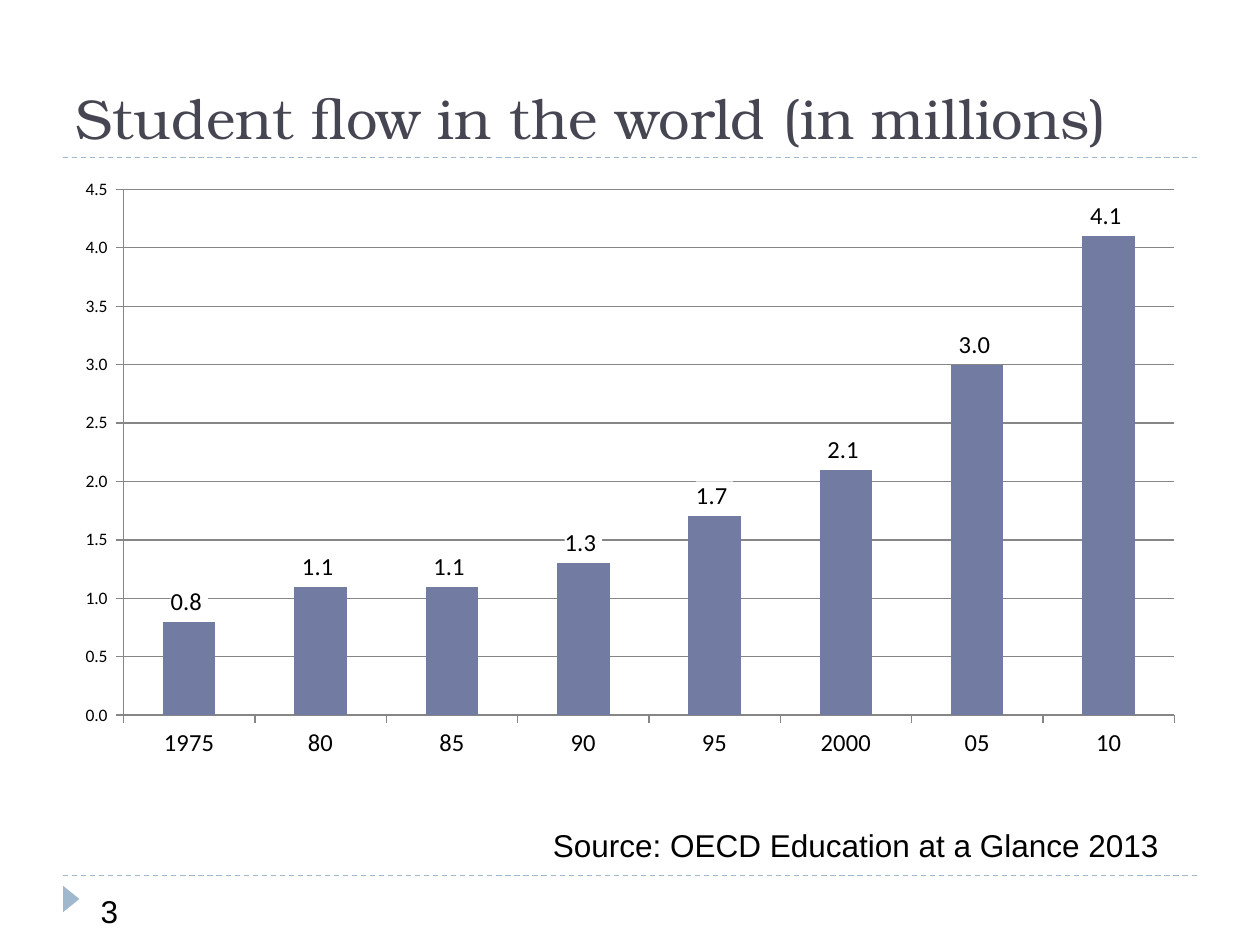
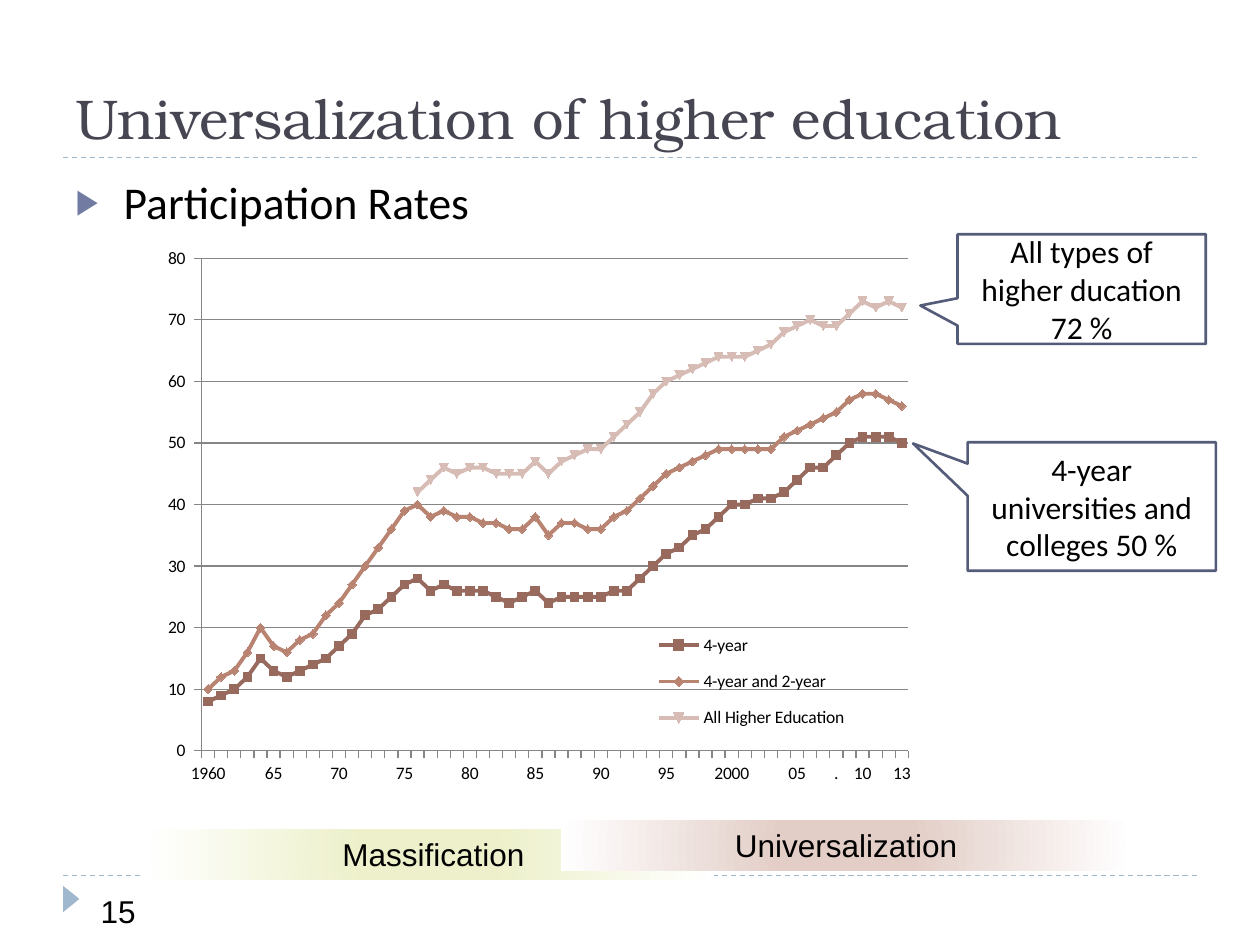
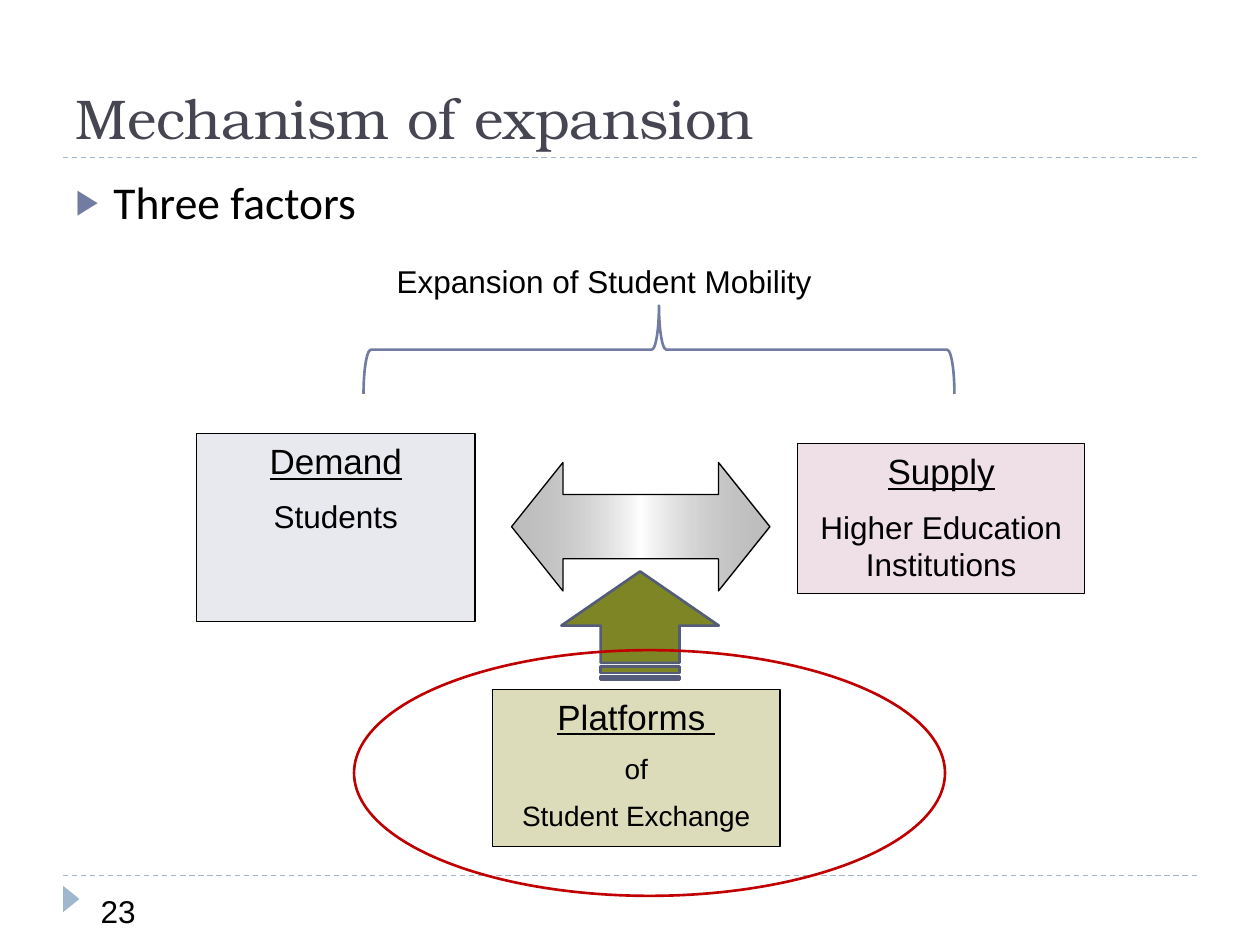
from dataclasses import dataclass

from lxml import etree
from pptx import Presentation
from pptx import util as u
from pptx.chart import data as cd
from pptx.dml import color as dc
from pptx.enum import chart as ch, dml, shapes, text
from pptx.oxml import ns

HUES = {
    "ink": "000000", "white": "FFFFFF", "title": "464653", "rule": "9FB8CD",
    "main": "727CA3", "edge": "545C79", "grid": "868686",
    "lime": "EDF0CA", "rose": "E3CEC7", "gray": "808080",
    "blue": "666699", "plum": "993366", "olive": "808000",
    "moss": "7D8525", "red": "C00000",
    "brown": "986A5D", "clay": "B98371", "blush": "D6BCB4",
}
SERIF, SANS, PLAIN = "TeX Gyre Bonum", "Calibri", "Arial"
KIND = shapes.MSO_SHAPE
LEFT, MID = text.PP_ALIGN.LEFT, text.PP_ALIGN.CENTER
TOP, HALF, BASE = text.MSO_ANCHOR.TOP, text.MSO_ANCHOR.MIDDLE, text.MSO_ANCHOR.BOTTOM
Area = tuple[float, float, float, float]


@dataclass
class Line:
    words: str
    size: float = 18
    under: bool = False
    gap: float = 0


@dataclass
class Form:
    kind: shapes.MSO_SHAPE
    area: Area
    fill: str | None = None
    edge: str | None = None
    width: float = 0.75
    turn: float = 0
    adjust: tuple[float, ...] = ()
    alpha: int = 100


@dataclass
class Stop:
    place: int
    hue: str
    alpha: int = 100


@dataclass
class Series:
    name: str
    hue: str
    start: int
    vals: list[int]


def rgb(name: str) -> dc.RGBColor:
    return dc.RGBColor.from_string(HUES[name])


def inch(area: Area) -> list[u.Length]:
    return [u.Inches(side) for side in area]


def child(parent, tag: str, **attrs):
    return etree.SubElement(parent, ns.qn(tag), {k: str(v) for k, v in attrs.items()})


def move(shape, area: Area) -> None:
    shape.left, shape.top, shape.width, shape.height = inch(area)


def write(frame, lines: list[Line], font: str = PLAIN, hue: str = "ink",
          align=LEFT, anchor=TOP) -> None:
    frame.word_wrap = True
    frame.auto_size = text.MSO_AUTO_SIZE.NONE
    frame.vertical_anchor = anchor
    frame.text = "\n".join(line.words for line in lines)
    for para, line in zip(frame.paragraphs, lines):
        para.alignment = align
        para.space_before = u.Pt(line.gap)
        for run in para.runs:
            run.font.name = font
            run.font.size = u.Pt(line.size)
            run.font.underline = line.under
            run.font.color.rgb = rgb(hue)


def draw(slide, form: Form):
    shape = slide.shapes.add_shape(form.kind, *inch(form.area))
    shape.shadow.inherit = False
    shape.rotation = form.turn
    for i, value in enumerate(form.adjust):
        shape.adjustments[i] = value
    if form.fill:
        shape.fill.solid()
        shape.fill.fore_color.rgb = rgb(form.fill)
        if form.alpha < 100:
            tint = shape._element.spPr.find(".//" + ns.qn("a:srgbClr"))
            child(tint, "a:alpha", val=form.alpha * 1000)
    else:
        shape.fill.background()
    if form.edge:
        shape.line.color.rgb = rgb(form.edge)
        shape.line.width = u.Pt(form.width)
    else:
        shape.line.fill.background()
    return shape


def blend(shape, stops: list[Stop], radial: bool = False) -> None:
    props = shape._element.spPr
    props.remove(props.find(ns.qn("a:noFill")))
    grad = etree.Element(ns.qn("a:gradFill"), rotWithShape="1")
    group = child(grad, "a:gsLst")
    for stop in stops:
        node = child(group, "a:gs", pos=stop.place * 1000)
        tint = child(node, "a:srgbClr", val=HUES[stop.hue])
        if stop.alpha < 100:
            child(tint, "a:alpha", val=stop.alpha * 1000)
    if radial:
        way = child(grad, "a:path", path="circle")
        child(way, "a:fillToRect", l=50000, t=50000, r=50000, b=50000)
    else:
        child(grad, "a:lin", ang=0, scaled=1)
    props.find(ns.qn("a:prstGeom")).addnext(grad)


def label(slide, area: Area, words: str) -> None:
    write(slide.shapes.add_textbox(*inch(area)).text_frame, [Line(words)])


def rule(slide, y: float) -> None:
    line = slide.shapes.add_connector(shapes.MSO_CONNECTOR.STRAIGHT,
                                      *inch((0.5, y, 9.5, y)))
    line.line.color.rgb = rgb("rule")
    line.line.width = u.Pt(0.75)
    line.line.dash_style = dml.MSO_LINE.DASH
    child(line._element.spPr, "a:effectLst")


def start(deck, title: str, page: str, point: str = "", depth: float = 0):
    slide = deck.slides.add_slide(deck.slide_layouts[1 if point else 5])
    head = slide.shapes.title
    move(head, (0.5, 0.17, 9, 1.08))
    write(head.text_frame, [Line(title, 32)], SERIF, "title", anchor=BASE)
    if point:
        body = slide.placeholders[1]
        move(body, (0.5, 1.33, 9, depth))
        write(body.text_frame, [Line(point, 26, gap=6)], SANS)
        props = body.text_frame.paragraphs[0]._p.get_or_add_pPr()
        props.set("marL", str(u.Inches(0.3)))
        props.set("indent", str(u.Inches(-0.3)))
        child(child(props, "a:buClr"), "a:srgbClr", val=HUES["main"])
        child(props, "a:buSzPct", val=76000)
        child(props, "a:buFont", typeface=PLAIN)
        child(props, "a:buChar", char="▶")
    for y in (1.25, 6.95):
        rule(slide, y)
    draw(slide, Form(KIND.ISOSCELES_TRIANGLE, (0.46, 7.07, 0.21, 0.13), "rule", turn=90))
    label(slide, (0.7, 7.03, 1.33, 0.4), page)
    return slide


def plot(slide, kind, area: Area, data, peak: float, step: float, style: str):
    chart = slide.shapes.add_chart(kind, *inch(area), data).chart
    chart.has_title = False
    chart.has_legend = False
    chart.font.name = SANS
    chart.font.size = u.Pt(10)
    chart.font.color.rgb = rgb("ink")
    scale = chart.value_axis
    scale.minimum_scale, scale.maximum_scale, scale.major_unit = 0, peak, step
    scale.has_major_gridlines = True
    scale.tick_labels.number_format = style
    scale.tick_labels.number_format_is_linked = False
    for part in (scale, chart.category_axis, scale.major_gridlines):
        part.format.line.color.rgb = rgb("grid")
        part.format.line.width = u.Pt(0.75)
    for axis in (scale, chart.category_axis):
        axis.major_tick_mark = ch.XL_TICK_MARK.OUTSIDE
    return chart


def layout(parent, area: Area, whole: Area, inner: bool = False):
    outer = etree.Element(ns.qn("c:layout"))
    box = child(outer, "c:manualLayout")
    if inner:
        child(box, "c:layoutTarget", val="inner")
    for side in "xy":
        child(box, f"c:{side}Mode", val="edge")
    for side, value, full in zip("xywh", area, whole[2:] * 2):
        child(box, f"c:{side}", val=value / full)
    for old in parent.findall(ns.qn("c:layout")):
        parent.remove(old)
    return outer


def flow(deck) -> None:
    slide = start(deck, "Student flow in the world (in millions)", "3")
    style = r"0.0_);[Red]\(0.0\)"
    data = cd.CategoryChartData(number_format=style)
    data.categories = ["1975", "80", "85", "90", "95", "2000", "05", "10"]
    data.add_series("Series 1", [0.8, 1.1, 1.1, 1.3, 1.7, 2.1, 3, 4.1])
    chart = plot(slide, ch.XL_CHART_TYPE.COLUMN_CLUSTERED, (0.5, 1.33, 9, 4.78),
                 data, 4.5, 0.5, style)
    chart.category_axis.tick_labels.font.size = u.Pt(14)
    bars = chart.plots[0]
    bars.gap_width = 150
    bars.vary_by_categories = False
    fill = bars.series[0].format.fill
    fill.solid()
    fill.fore_color.rgb = rgb("main")
    bars.has_data_labels = True
    marks = bars.data_labels
    marks.show_value = True
    marks.number_format = style
    marks.number_format_is_linked = False
    marks.position = ch.XL_LABEL_POSITION.OUTSIDE_END
    marks.font.size = u.Pt(14)
    back = etree.Element(ns.qn("c:spPr"))
    child(child(back, "a:solidFill"), "a:srgbClr", val=HUES["white"])
    marks._element.find(ns.qn("c:numFmt")).addnext(back)
    label(slide, (4.29, 6.51, 5.04, 0.4), "Source: OECD Education at a Glance 2013")


RATES = [
    Series("4-year", "brown", 0, [
        8, 9, 10, 12, 15, 13, 12, 13, 14, 15, 17, 19, 22, 23, 25, 27, 28, 26,
        27, 26, 26, 26, 25, 24, 25, 26, 24, 25, 25, 25, 25, 26, 26, 28, 30, 32,
        33, 35, 36, 38, 40, 40, 41, 41, 42, 44, 46, 46, 48, 50, 51, 51, 51, 50]),
    Series("4-year and 2-year", "clay", 0, [
        10, 12, 13, 16, 20, 17, 16, 18, 19, 22, 24, 27, 30, 33, 36, 39, 40, 38,
        39, 38, 38, 37, 37, 36, 36, 38, 35, 37, 37, 36, 36, 38, 39, 41, 43, 45,
        46, 47, 48, 49, 49, 49, 49, 49, 51, 52, 53, 54, 55, 57, 58, 58, 57, 56]),
    Series("All Higher Education", "blush", 16, [
        42, 44, 46, 45, 46, 46, 45, 45, 45, 47, 45, 47, 48, 49, 49, 51, 53, 55,
        58, 60, 61, 62, 63, 64, 64, 64, 65, 66, 68, 69, 70, 69, 69, 71, 73, 72,
        73, 72]),
]


def years() -> list[str]:
    names = [""] * 54
    for year in range(1960, 2011, 5):
        names[year - 1960] = str(year) if year in (1960, 2000) else f"{year % 100:02}"
    names[48], names[53] = ".", "13"
    return names


def spread(deck) -> None:
    slide = start(deck, "Universalization of higher education", "15",
                  " Participation Rates", 5.37)
    for area, hue, words in (
        ((1.14, 6.58, 4.53, 0.4), "lime", " Massification"),
        ((4.45, 6.51, 4.53, 0.4), "rose", "Universalization"),
    ):
        band = draw(slide, Form(KIND.RECTANGLE, area))
        blend(band, [Stop(23, hue), Stop(100, "white")], radial=True)
        write(band.text_frame, [Line(words)], align=MID)

    data = cd.CategoryChartData(number_format="0_ ")
    data.categories = years()
    for rate in RATES:
        data.add_series(rate.name, [None] * rate.start + rate.vals)
    whole = (1.14, 1.86, 6.77, 4.72)
    chart = plot(slide, ch.XL_CHART_TYPE.LINE_MARKERS, whole, data, 80, 10, "0_ ")
    for rate, line in zip(RATES, chart.plots[0].series):
        line.smooth = False
        line.format.line.color.rgb = rgb(rate.hue)
        line.format.line.width = u.Pt(2.25)
        line.marker.size = 5
        fill = line.marker.format.fill
        fill.solid()
        fill.fore_color.rgb = rgb(rate.hue)
        line.marker.format.line.color.rgb = rgb(rate.hue)
    node = chart.category_axis._element
    for props in node.findall(ns.qn("c:txPr")):
        node.remove(props)
    skip = etree.Element(ns.qn("c:tickLblSkip"), val="1")
    node.find(ns.qn("c:noMultiLvlLbl")).addprevious(skip)
    chart.has_legend = True
    legend = chart.legend
    legend.position = ch.XL_LEGEND_POSITION.RIGHT
    legend.font.size = u.Pt(10)
    legend.include_in_layout = False
    key = legend._element
    spot = layout(key, (3.71, 3.05, 2.23, 1), whole)
    key.find(ns.qn("c:legendPos")).addnext(spot)
    field = chart._chartSpace.chart.plotArea
    field.insert(0, layout(field, (0.46, 0.19, 5.61, 3.91), whole, inner=True))

    for area, tip, lines in (
        ((7.6, 1.86, 1.97, 0.87), (-0.65, 0.15),
         ["All types of higher ducation", "72 %"]),
        ((7.68, 3.51, 1.97, 1.02), (-0.72, -0.49),
         ["4-year universities and colleges 50 %"]),
    ):
        note = draw(slide, Form(KIND.RECTANGULAR_CALLOUT, area, "white", "edge",
                                1.5, adjust=tip))
        write(note.text_frame, [Line(words) for words in lines], SANS,
              align=MID, anchor=HALF)


def cause(deck) -> None:
    slide = start(deck, "Mechanism of expansion", "23", "Three factors", 0.92)
    for area, hue, alpha, head, size, rest in (
        ((1.56, 3.44, 2.21, 1.49), "blue", 15, "Demand", 18, ["Students"]),
        ((6.33, 3.52, 2.28, 1.19), "plum", 15, "Supply", 18,
         ["Higher Education Institutions"]),
        ((3.91, 5.47, 2.28, 1.25), "olive", 27, "Platforms ", 16,
         ["of", "Student Exchange"]),
    ):
        box = draw(slide, Form(KIND.RECTANGLE, area, hue, "ink", alpha=alpha))
        lines = [Line(head, 20, True, 10)]
        lines += [Line(words, size, gap=size / 2) for words in rest]
        write(box.text_frame, lines, align=MID)
    swap = draw(slide, Form(KIND.LEFT_RIGHT_ARROW, (4.06, 3.67, 2.05, 1.02),
                            edge="ink", adjust=(0.5, 0.4)))
    blend(swap, [Stop(0, "gray", 51), Stop(50, "white"), Stop(100, "gray", 51)])
    for form in (
        Form(KIND.STRIPED_RIGHT_ARROW, (4.65, 4.34, 0.86, 1.25), "moss", "edge", 1.5, 270),
        Form(KIND.RIGHT_BRACE, (4.88, 0.43, 0.7, 4.69), None, "main", 1.5, 270),
        Form(KIND.OVAL, (2.81, 5.16, 4.69, 1.95), None, "red", 1.5),
    ):
        draw(slide, form)
    label(slide, (3.05, 2.03, 4.06, 0.4), "Expansion of Student Mobility")


def main() -> None:
    deck = Presentation()
    deck.slide_width, deck.slide_height = u.Inches(10), u.Inches(7.5)
    for build in (flow, spread, cause):
        build(deck)
    deck.save("out.pptx")


if __name__ == "__main__":
    main()
